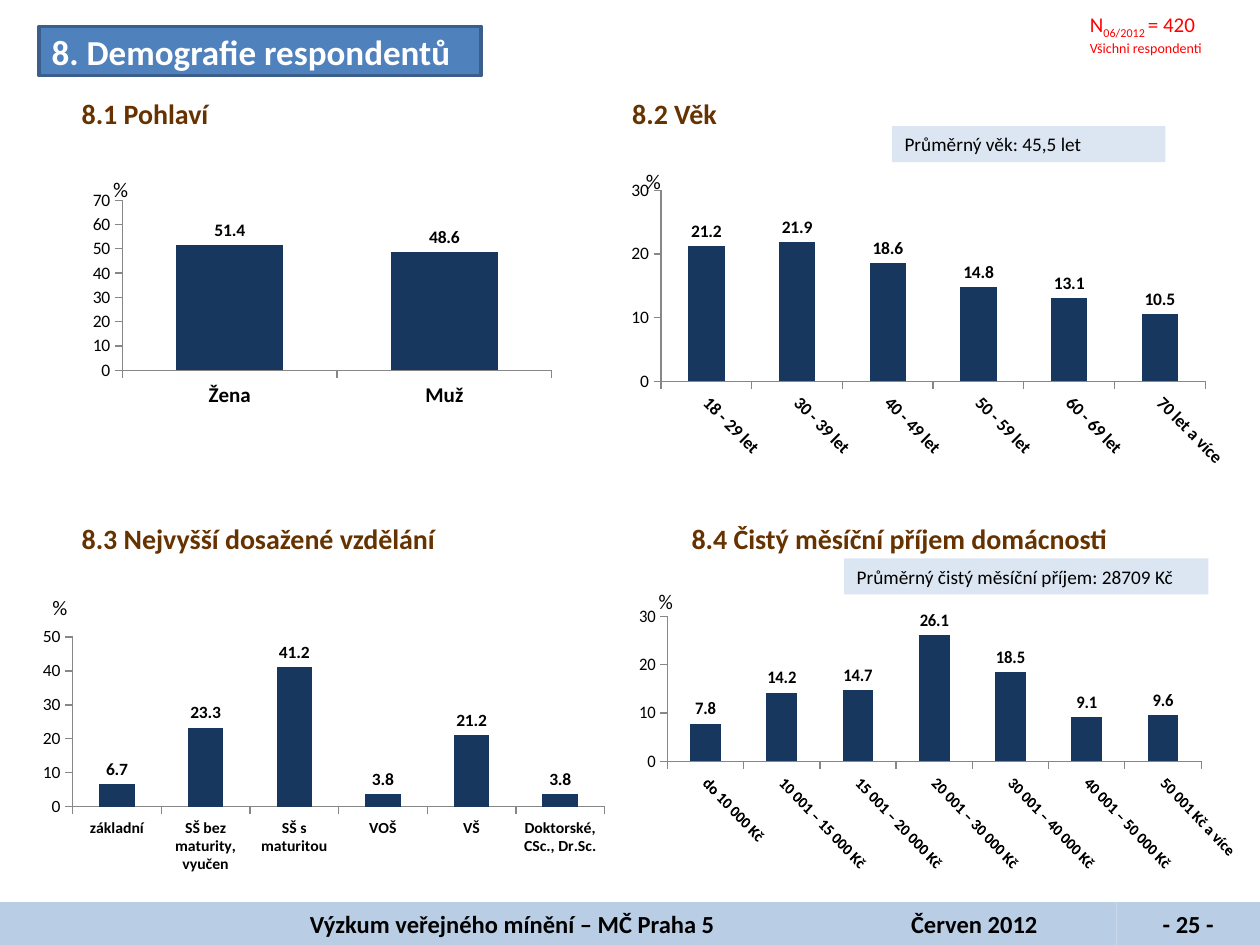
"""Build the slide on respondent demographics with four column charts."""
from lxml.etree import Element, SubElement
from pptx import Presentation
from pptx.chart.data import CategoryChartData
from pptx.dml.color import RGBColor
from pptx.enum.chart import XL_CHART_TYPE, XL_LABEL_POSITION, XL_TICK_MARK
from pptx.enum.shapes import MSO_SHAPE
from pptx.enum.text import MSO_ANCHOR, MSO_AUTO_SIZE, PP_ALIGN
from pptx.oxml.ns import qn
from pptx.util import Pt

THEME = {
    "font": "Calibri", "black": "000000", "white": "FFFFFF", "red": "FF0000",
    "brown": "663300", "navy": "17375E", "blue": "4F81BD", "edge": "3A5F8C",
    "band": "B9CDE5", "pale": "DCE6F2", "axis": "878787",
    "title": 20, "head": 16, "foot": 14, "unit": 12, "note": 11, "tick": 10, "small": 8,
}
TITLE = ("8. Demografie respondentů", (22.3, 15.1, 252.7, 28.1))
HEADS = [
    ("8.1 Pohlaví", (39.6, 51.8, 105, 26.6)),
    ("8.2 Věk", (354.2, 51.8, 282, 26.6)),
    ("8.3 Nejvyšší dosažené vzdělání", (39.6, 294.5, 235.4, 26.6)),
    ("8.4 Čistý měsíční příjem domácnosti", (388.1, 294.5, 283.7, 26.6)),
]
NOTES = [
    ("Průměrný věk: 45,5 let", (509.8, 72, 156.2, 20.6)),
    ("Průměrný čistý měsíční příjem: 28709 Kč", (482.4, 319, 208.1, 20.6)),
]
SAMPLE = [[("N", 12, 0), ("06/2012 ", 12, -25000), ("= 420", 12, 0)],
          [("Všichni respondenti", THEME["small"], 0)]]
FOOT = [("Výzkum veřejného mínění – MČ Praha 5", 475.5, 117),
        ("Červen 2012", 162.5, 7.2), ("- 25 -", 82, 7.2)]
CHARTS = [
    {"box": (39.6, 62.6, 286.6, 185.8), "plot": (0.106, 0.279, 0.856, 0.523),
     "unit": (0.08, 0.19), "top": 70, "size": 12, "gap": 100, "turn": 0,
     "data": [("Žena", 51.4), ("Muž", 48.6)]},
    {"box": (356.4, 71.3, 350.6, 218.2), "plot": (0.061, 0.172, 0.887, 0.5),
     "unit": (0.03, 0.1), "top": 30, "size": 10, "gap": 150, "turn": 45,
     "data": [("18 - 29 let", 21.2), ("30 - 39 let", 21.9), ("40 - 49 let", 18.6),
              ("50 - 59 let", 14.8), ("60 - 69 let", 13.1), ("70 let a více", 10.5)]},
    {"box": (14.4, 292.3, 334.8, 206.6), "plot": (0.081, 0.354, 0.908, 0.478),
     "unit": (0.04, 0.22), "top": 50, "size": 9, "gap": 150, "turn": 0,
     "data": [("základní", 6.7), ("SŠ bez maturity, vyučen", 23.3), ("SŠ s maturitou", 41.2),
              ("VOŠ", 3.8), ("VŠ", 21.2), ("Doktorské, CSc., Dr.Sc.", 3.8)]},
    {"box": (354.2, 280.1, 353.5, 222.5), "plot": (0.081, 0.324, 0.908, 0.373),
     "unit": (0.06, 0.24), "top": 30, "size": 9, "gap": 150, "turn": 45,
     "data": [("do 10 000 Kč", 7.8), ("10 001 – 15 000 Kč", 14.2), ("15 001 – 20 000 Kč", 14.7),
              ("20 001 – 30 000 Kč", 26.1), ("30 001 – 40 000 Kč", 18.5),
              ("40 001 – 50 000 Kč", 9.1), ("50 001 Kč a více", 9.6)]},
]


def tint(name):
    return RGBColor.from_string(THEME[name])


def points(box):
    return [Pt(n) for n in box]


def style(font, size, color="black", bold=False):
    font.name, font.size, font.bold = THEME["font"], Pt(size), bold
    font.color.rgb = tint(color)


def write(para, text, size, color="black", bold=False, align=PP_ALIGN.LEFT, base=0):
    para.alignment = align
    run = para.add_run()
    run.text = text
    style(run.font, size, color, bold)
    if base:
        run.font._element.set("baseline", str(base))


def frame(shape, anchor=MSO_ANCHOR.TOP):
    text = shape.text_frame
    text.word_wrap, text.auto_size = True, MSO_AUTO_SIZE.NONE
    text.vertical_anchor = anchor
    return text


def panel(slide, box, color):
    shape = slide.shapes.add_shape(MSO_SHAPE.RECTANGLE, *points(box))
    shape.shadow.inherit = False
    shape.fill.solid()
    shape.fill.fore_color.rgb = tint(color)
    shape.line.fill.background()
    return frame(shape, MSO_ANCHOR.MIDDLE)


def place(parent, index, values, inner=False):
    for old in parent.findall(qn("c:layout")):
        parent.remove(old)
    layout = Element(qn("c:layout"))
    parent.insert(index, layout)
    manual = SubElement(layout, qn("c:manualLayout"))
    parts = [("layoutTarget", "inner")] if inner else []
    parts += [("xMode", "edge"), ("yMode", "edge")]
    parts += zip("xywh", values)
    for tag, value in parts:
        SubElement(manual, qn(f"c:{tag}")).set("val", str(value))


def columns(slide, item):
    data = CategoryChartData(number_format="0.0")
    names, values = zip(*item["data"])
    data.categories = names
    data.add_series("%", values)
    chart = slide.shapes.add_chart(
        XL_CHART_TYPE.COLUMN_CLUSTERED, *points(item["box"]), data).chart
    style(chart.font, THEME["unit"])
    chart.has_legend = False
    chart.has_title = True
    title = chart.chart_title
    write(title.text_frame.paragraphs[0], "%", THEME["unit"])
    place(title._element, 1, item["unit"])
    place(chart._chartSpace.chart.plotArea, 0, item["plot"], inner=True)

    plot = chart.plots[0]
    plot.gap_width, plot.vary_by_categories = item["gap"], False
    bars = plot.series[0].format.fill
    bars.solid()
    bars.fore_color.rgb = tint("navy")
    plot.has_data_labels = True
    labels = plot.data_labels
    labels.show_value, labels.position = True, XL_LABEL_POSITION.OUTSIDE_END
    labels.number_format, labels.number_format_is_linked = "0.0", False
    style(labels.font, THEME["tick"], bold=True)

    across, up = chart.category_axis, chart.value_axis
    for axis, size, bold in ((across, item["size"], True), (up, THEME["tick"], False)):
        axis.has_major_gridlines = False
        axis.major_tick_mark, axis.minor_tick_mark = XL_TICK_MARK.OUTSIDE, XL_TICK_MARK.NONE
        axis.format.line.color.rgb = tint("axis")
        axis.format.line.width = Pt(0.75)
        style(axis.tick_labels.font, size, bold=bold)
    up.minimum_scale, up.maximum_scale, up.major_unit = 0, item["top"], 10
    up.tick_labels.number_format, up.tick_labels.number_format_is_linked = "0", False
    body = across._element.find(qn("c:txPr")).find(qn("a:bodyPr"))
    body.set("rot", str(item["turn"] * 60000))
    body.set("vert", "horz")


def banner(slide):
    text, box = TITLE
    shape = slide.shapes.title
    shape.left, shape.top, shape.width, shape.height = points(box)
    shape_props = shape._element.spPr
    outline = Element(qn("a:prstGeom"), prst="roundRect")
    SubElement(outline, qn("a:avLst"))
    shape_props.insert(1, outline)
    shape.fill.solid()
    shape.fill.fore_color.rgb = tint("blue")
    shape.line.color.rgb = tint("edge")
    shape.line.width = Pt(2)
    write(frame(shape, MSO_ANCHOR.MIDDLE).paragraphs[0], text, THEME["title"], "white", True)


def main():
    deck = Presentation()
    deck.slide_width, deck.slide_height = Pt(720), Pt(540)
    slide = deck.slides.add_slide(deck.slide_layouts[5])
    left = 0
    for text, width, pad in FOOT:
        band = panel(slide, (left, 515.5, width, 24.5), "band")
        band.margin_left = Pt(pad)
        write(band.paragraphs[0], text, THEME["foot"], bold=True, align=PP_ALIGN.CENTER)
        left += width
    for item in CHARTS:
        columns(slide, item)
    for text, box in HEADS:
        head = frame(slide.shapes.add_textbox(*points(box)))
        write(head.paragraphs[0], text, THEME["head"], "brown", True)
    for text, box in NOTES:
        write(panel(slide, box, "pale").paragraphs[0], text, THEME["note"])
    banner(slide)
    sample = frame(slide.shapes.add_textbox(*points((619.9, 3.6, 97.2, 30.2))))
    sample.margin_left = sample.margin_right = Pt(2.9)
    sample.margin_top = sample.margin_bottom = Pt(2.9)
    sample.add_paragraph()
    for para, runs in zip(sample.paragraphs, SAMPLE):
        for text, size, base in runs:
            write(para, text, size, "red", base=base)
    deck.save("out.pptx")


if __name__ == "__main__":
    main()
